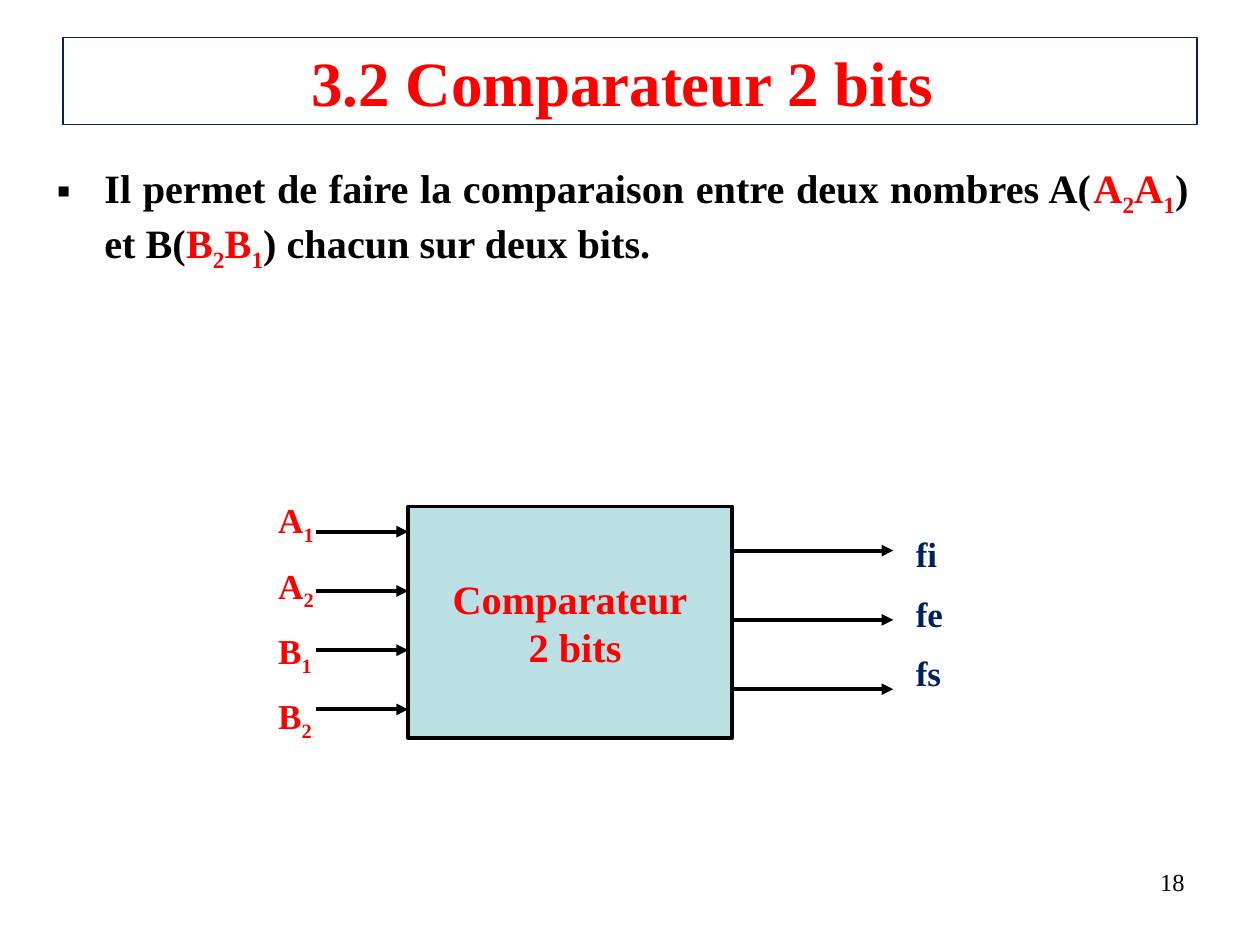
from lxml.etree import SubElement
from pptx import Presentation
from pptx.dml.color import RGBColor
from pptx.enum.shapes import MSO_CONNECTOR, MSO_SHAPE
from pptx.enum.text import MSO_ANCHOR, PP_ALIGN
from pptx.oxml.ns import qn
from pptx.util import Inches, Pt

FONT = "Times New Roman"
RED, NAVY, BLACK, PALE_BLUE = "FF0000", "002060", "000000", "BBE0E3"


def signal(letter, index):
    return [(letter, RED, False), (index, RED, True)]


TITLE = [[("3.2 Comparateur 2 bits ", RED, False)]]
DEFINITION = [[
    ("Il permet de faire la comparaison entre deux nombres A(", BLACK, False),
    *signal("A", "2"), *signal("A", "1"),
    (") et B(", BLACK, False),
    *signal("B", "2"), *signal("B", "1"),
    (") chacun sur deux bits.", BLACK, False),
]]
INPUTS = [signal(letter, index) for letter in "AB" for index in "12"]
OUTPUTS = [[(name, NAVY, False)] for name in ("fi", "fe", "fs")]
BLOCK_LABEL = [[("Comparateur", RED, False)], [(" 2 bits", RED, False)]]
PAGE_NUMBER = [[("18", BLACK, False)]]

BLOCK = (3.24, 4.02, 2.57, 1.84)
INPUT_LEFT, INPUT_TOP, INPUT_STEP = 2.51, 4.22, 0.47
OUTPUT_RIGHT, OUTPUT_TOP, OUTPUT_STEP = 7.09, 4.37, 0.55


def color(value):
    return RGBColor.from_string(value)


def space_before(para, percent):
    spacing = SubElement(para._p.get_or_add_pPr(), qn("a:spcBef"))
    SubElement(spacing, qn("a:spcPct")).set("val", str(percent * 1000))


def write(box, lines, size, align=PP_ALIGN.LEFT, bold=True, gap=0,
          anchor=MSO_ANCHOR.TOP, wrap=True):
    frame = box.text_frame
    frame.word_wrap = wrap
    frame.vertical_anchor = anchor
    for number, line in enumerate(lines):
        para = frame.add_paragraph() if number else frame.paragraphs[0]
        para.alignment = align
        if gap:
            space_before(para, gap)
        for text, shade, lowered in line:
            span = para.add_run()
            span.text = text
            span.font.name = FONT
            span.font.size = Pt(size)
            span.font.bold = bold
            span.font.color.rgb = color(shade)
            if lowered:
                span.font._element.set("baseline", "-25000")
    return frame


def add_text(page, area, lines, size, **style):
    box = page.shapes.add_textbox(*map(Inches, area))
    return write(box, lines, size, **style)


def add_frame(page, area, line, width, fill=None):
    box = page.shapes.add_shape(MSO_SHAPE.RECTANGLE, *map(Inches, area))
    box.shadow.inherit = False
    box.line.color.rgb = color(line)
    box.line.width = Pt(width)
    if fill:
        box.fill.solid()
        box.fill.fore_color.rgb = color(fill)
    else:
        box.fill.background()
    return box


def add_arrow(page, left, right, height):
    arrow = page.shapes.add_connector(
        MSO_CONNECTOR.STRAIGHT, *map(Inches, (left, height, right, height)))
    arrow.line.color.rgb = color(BLACK)
    arrow.line.width = Pt(2.25)
    SubElement(arrow.line._get_or_add_ln(), qn("a:tailEnd")).set("type", "triangle")
    SubElement(arrow._element.spPr, qn("a:effectLst"))


def add_bullet(para, mark, indent):
    properties = para._p.get_or_add_pPr()
    properties.set("marL", str(Inches(indent)))
    properties.set("indent", str(-Inches(indent)))
    SubElement(properties, qn("a:buFont")).set("typeface", FONT)
    SubElement(properties, qn("a:buChar")).set("char", mark)


def main():
    """Build the slide on the two-bit comparator."""
    deck = Presentation()
    deck.slide_width, deck.slide_height = Inches(10), Inches(7.5)
    page = deck.slides.add_slide(deck.slide_layouts[6])

    add_text(page, (7.17, 6.83, 2.33, 0.52), PAGE_NUMBER, 14,
             align=PP_ALIGN.RIGHT, bold=False)
    write(add_frame(page, (0.5, 0.3, 9, 0.69), NAVY, 0.75), TITLE, 36,
          align=PP_ALIGN.CENTER, anchor=MSO_ANCHOR.MIDDLE)
    body = add_text(page, (0.35, 1.25, 9.18, 1.1), DEFINITION, 23,
                    align=PP_ALIGN.JUSTIFY, gap=20)
    add_bullet(body.paragraphs[0], "▪", 0.38)

    add_text(page, (2.11, 3.91, 0.78, 2.96), INPUTS, 20, gap=50)
    write(add_frame(page, BLOCK, BLACK, 2.25, PALE_BLUE), BLOCK_LABEL, 23,
          align=PP_ALIGN.CENTER, anchor=MSO_ANCHOR.MIDDLE, wrap=False)
    add_text(page, (7.17, 4.18, 1.26, 1.45), OUTPUTS, 20, gap=50)

    block_left, block_right = BLOCK[0], BLOCK[0] + BLOCK[2]
    for row in range(len(INPUTS)):
        add_arrow(page, INPUT_LEFT, block_left, INPUT_TOP + row * INPUT_STEP)
    for row in range(len(OUTPUTS)):
        add_arrow(page, block_right, OUTPUT_RIGHT, OUTPUT_TOP + row * OUTPUT_STEP)

    deck.save("out.pptx")


if __name__ == "__main__":
    main()
